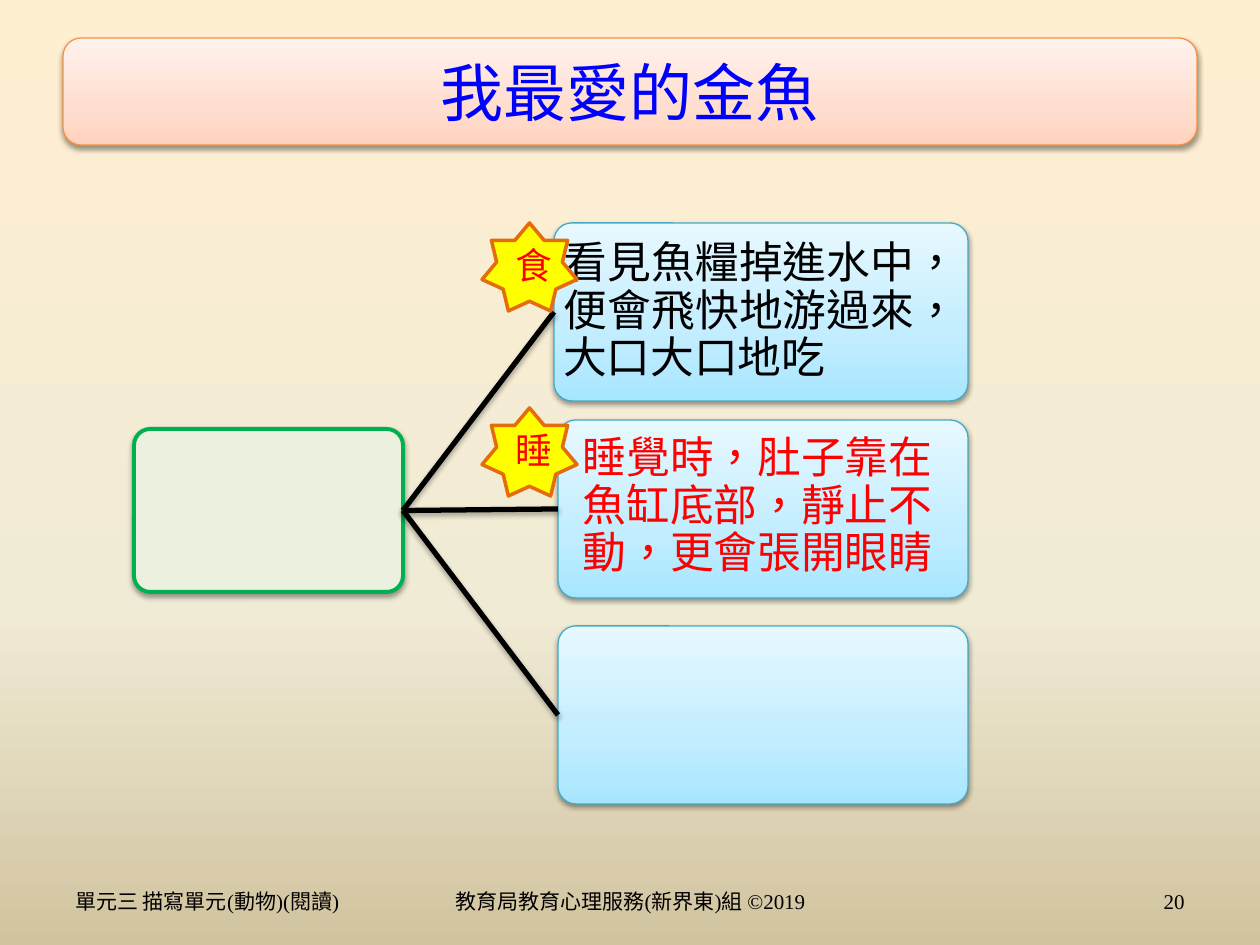
from lxml.etree import SubElement
from pptx import Presentation
from pptx.dml.color import RGBColor
from pptx.enum.lang import MSO_LANGUAGE_ID
from pptx.enum.shapes import MSO_CONNECTOR, MSO_SHAPE
from pptx.enum.text import MSO_ANCHOR, PP_ALIGN
from pptx.oxml.ns import qn
from pptx.util import Emu, Pt

SCALE = 914400 / 126
CJK = "Noto Sans CJK SC"
BLUE_STOPS = [(0, "A7E6FF"), (35, "C1EDFF"), (100, "E7F8FF")]
PEACH_STOPS = [(0, "FFD2BD"), (35, "FFDED0"), (100, "FFF2ED")]
SAND_STOPS = [(0, "FFEFD1"), (65, "F0EBD5"), (100, "D1C39F")]


def px(*lengths):
    """Turn pixel lengths into EMU."""
    return [Emu(round(length * SCALE)) for length in lengths]


def color(hex_string):
    """Turn a hex string into a colour."""
    return RGBColor.from_string(hex_string)


def set_gradient(fill, element, stops, angle):
    """Fill with a linear gradient of any number of stops."""
    fill.gradient()
    fill.gradient_angle = angle
    stop_list = next(element.iter(qn("a:gsLst")))
    for stop in list(stop_list):
        stop_list.remove(stop)
    for position, shade in stops:
        stop = SubElement(stop_list, qn("a:gs"), pos=str(position * 1000))
        SubElement(stop, qn("a:srgbClr"), val=shade)


def add_shadow(effects, opacity, distance):
    """Add a soft black shadow that falls straight down."""
    shadow = SubElement(effects, qn("a:outerShdw"), blurRad="40000", dist=str(distance),
                        dir="5400000", rotWithShape="0")
    black = SubElement(shadow, qn("a:srgbClr"), val="000000")
    SubElement(black, qn("a:alpha"), val=str(opacity * 1000))


def write(shape, text, size, font, shade, align, anchor=MSO_ANCHOR.MIDDLE, spacing=None):
    """Write one wrapped paragraph of Traditional Chinese into a shape."""
    frame = shape.text_frame
    frame.word_wrap = True
    frame.vertical_anchor = anchor
    para = frame.paragraphs[0]
    para.alignment = align
    if spacing:
        para.line_spacing = spacing
    para.font.size = Pt(size)
    para.font.name = font
    para.font.color.rgb = color(shade)
    span = para.add_run()
    span.text = text
    span.font.language_id = MSO_LANGUAGE_ID.TRADITIONAL_CHINESE


def add_panel(page, box, line, width, radius, stops=None, plain=None):
    """Add a shadowed rounded panel with a gradient or plain fill."""
    panel = page.shapes.add_shape(MSO_SHAPE.ROUNDED_RECTANGLE, *px(*box))
    panel.adjustments[0] = radius
    if stops:
        set_gradient(panel.fill, panel.element, stops, 90)
    else:
        panel.fill.solid()
        panel.fill.fore_color.rgb = color(plain)
    panel.line.color.rgb = color(line)
    panel.line.width = Pt(width)
    panel.shadow.inherit = False
    add_shadow(panel.element.spPr.find(qn("a:effectLst")), 38, 20000)
    return panel


def add_branch(page, root, leaf):
    """Join the right side of the root to the left side of a leaf."""
    branch = page.shapes.add_connector(MSO_CONNECTOR.STRAIGHT, 0, 0, 0, 0)
    branch.begin_connect(root, 3)
    branch.end_connect(leaf, 1)
    branch.line.color.rgb = color("000000")
    branch.line.width = Pt(3)
    add_shadow(SubElement(branch.element.spPr, qn("a:effectLst")), 35, 23000)


def add_star(page, left, top, text, font):
    """Add a yellow star that labels a leaf."""
    star = page.shapes.add_shape(MSO_SHAPE.STAR_7_POINT, *px(left, top, 95, 88))
    star.fill.solid()
    star.fill.fore_color.rgb = color("FFFF00")
    star.line.color.rgb = color("E46C0A")
    star.line.width = Pt(2)
    star.shadow.inherit = False
    write(star, text, 21, font, "FF0000", PP_ALIGN.CENTER)


def add_title(page, box):
    """Add the title banner."""
    banner = add_panel(page, box, "F69240", 0.75, 0.17, PEACH_STOPS)
    write(banner, "我最愛的金魚", 36, "Arial", "0000FF", PP_ALIGN.CENTER)


def add_tree(page, box):
    """Add the root, its three leaves and their labels."""
    left, top, width, height = box
    root = add_panel(page, (left, top + 206, 269, 163), "00B050", 2.25, 0.1, plain="EBF1DE")
    leaves = []
    for indent, drop in ((420, 0), (424, 197), (424, 403)):
        leaf_box = (left + indent, top + drop, width - indent, 178)
        leaves.append(add_panel(page, leaf_box, "46AAC5", 0.75, 0.1, BLUE_STOPS))
    for leaf in leaves:
        add_branch(page, root, leaf)

    write(leaves[0], "看見魚糧掉進水中，便會飛快地游過來，大口大口地吃", 25, CJK,
          "000000", PP_ALIGN.JUSTIFY, spacing=0.9)
    frame = leaves[0].text_frame
    frame.margin_left = frame.margin_right = frame.margin_top = frame.margin_bottom = px(4)[0]

    add_star(page, left + 348, top, "食", "Calibri")
    add_star(page, left + 348, top + 185, "睡", CJK)
    note = page.shapes.add_textbox(*px(left + 430, top + 207, 387, 156))
    write(note, "睡覺時，肚子靠在魚缸底部，靜止不動，更會張開眼睛", 25, CJK,
          "FF0000", PP_ALIGN.CENTER, MSO_ANCHOR.TOP, 0.9)


def add_footer(page, box):
    """Add the unit name, the publisher and the page number."""
    left, top, width, height = box
    parts = [
        (0, 359, "單元三 描寫單元(動物)(閱讀)", PP_ALIGN.LEFT),
        (368, 399, "教育局教育心理服務(新界東)組 ©2019", PP_ALIGN.CENTER),
        (width - 294, 294, "20", PP_ALIGN.RIGHT),
    ]
    for offset, part_width, text, align in parts:
        part = page.shapes.add_textbox(*px(left + offset, top, part_width, height))
        write(part, text, 12, "Times New Roman", "000000", align)


def main():
    """Build and save the deck."""
    deck = Presentation()
    deck.slide_width, deck.slide_height = px(1260, 945)
    page = deck.slides.add_slide(deck.slide_layouts[6])
    set_gradient(page.background.fill, page.element, SAND_STOPS, 270)
    add_tree(page, (134, 223, 834, 581))
    add_title(page, (63, 38, 1134, 107))
    add_footer(page, (63, 876, 1134, 50))
    deck.save("out.pptx")


if __name__ == "__main__":
    main()
